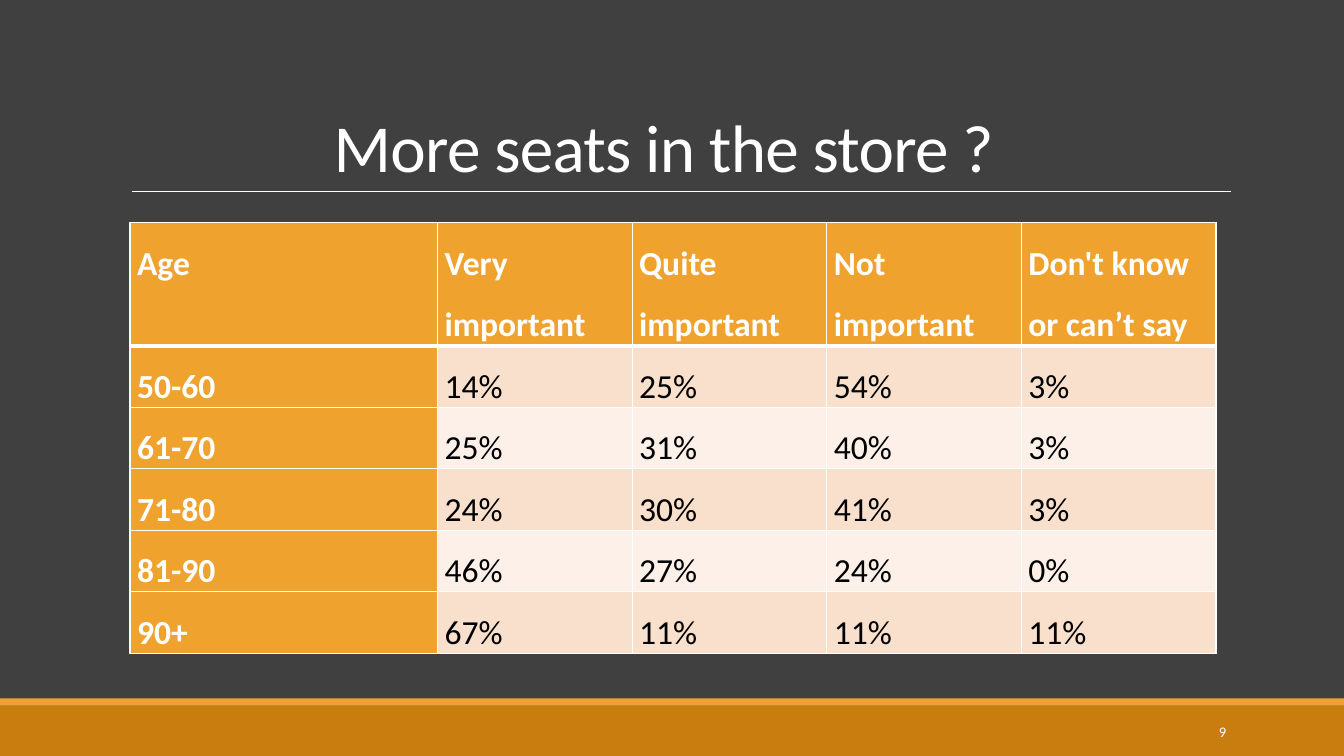
from lxml import etree
from pptx import Presentation
from pptx.dml.color import RGBColor
from pptx.enum.shapes import MSO_CONNECTOR, MSO_SHAPE
from pptx.enum.text import MSO_ANCHOR, MSO_AUTO_SIZE, PP_ALIGN
from pptx.oxml.ns import qn
from pptx.util import Inches, Pt

RECTANGLE = MSO_SHAPE.RECTANGLE
STRAIGHT = MSO_CONNECTOR.STRAIGHT
TOP, MIDDLE, BOTTOM = MSO_ANCHOR.TOP, MSO_ANCHOR.MIDDLE, MSO_ANCHOR.BOTTOM
LEFT, RIGHT = PP_ALIGN.LEFT, PP_ALIGN.RIGHT

FONT = "Calibri"
CHARCOAL = RGBColor(0x40, 0x40, 0x40)
ORANGE = RGBColor(0xF0, 0xA2, 0x2E)
DARK_ORANGE = RGBColor(0xC8, 0x7D, 0x0E)
PEACH = RGBColor(0xF9, 0xE0, 0xCD)
PALE_PEACH = RGBColor(0xFC, 0xF0, 0xE8)
WHITE = RGBColor(0xFF, 0xFF, 0xFF)
BLACK = RGBColor(0x00, 0x00, 0x00)

ANSWERS = [
    ["Age", "Very important", "Quite important", "Not important", "Don't know or can’t say"],
    ["50-60", "14%", "25%", "54%", "3%"],
    ["61-70", "25%", "31%", "40%", "3%"],
    ["71-80", "24%", "30%", "41%", "3%"],
    ["81-90", "46%", "27%", "24%", "0%"],
    ["90+", "67%", "11%", "11%", "11%"],
]
AGE_WIDTH, ANSWER_WIDTH = 3.05, 1.93
HEADER_HEIGHT, ROW_HEIGHT = 1.22, 0.61


def add_run(paragraph, text, size, color, bold=False):
    run = paragraph.add_run()
    run.text = text
    run.font.name = FONT
    run.font.size = Pt(size)
    run.font.bold = bold
    run.font.color.rgb = color
    return run


def add_band(slide, top, height, color):
    band = slide.shapes.add_shape(
        RECTANGLE, 0, Inches(top), Inches(13.33), Inches(height))
    band.shadow.inherit = False
    band.fill.solid()
    band.fill.fore_color.rgb = color
    band.line.fill.background()


def add_title_rule(slide):
    rule = slide.shapes.add_connector(
        STRAIGHT, Inches(1.31), Inches(1.9), Inches(12.21), Inches(1.9))
    rule.line.color.rgb = WHITE
    rule.line.width = Pt(0.5)
    etree.SubElement(rule.element.spPr, qn("a:effectLst"))


def fill_title(slide, text):
    title = slide.shapes.title
    title.left, title.top = Inches(1.2), Inches(0.31)
    title.width, title.height = Inches(11), Inches(1.59)
    frame = title.text_frame
    frame.auto_size = MSO_AUTO_SIZE.NONE
    frame.vertical_anchor = BOTTOM
    frame.margin_left = Inches(2.11)
    paragraph = frame.paragraphs[0]
    paragraph.alignment = LEFT
    paragraph.line_spacing = 0.85
    run = add_run(paragraph, text, 48, WHITE)
    run.font._element.set("spc", "-50")


def set_borders(cell, top_width, bottom_width):
    properties = cell._tc.get_or_add_tcPr()
    widths = {"a:lnL": 1, "a:lnR": 1, "a:lnT": top_width, "a:lnB": bottom_width}
    for side, width in widths.items():
        border = etree.SubElement(properties, qn(side), w=str(Pt(width)))
        fill = etree.SubElement(border, qn("a:solidFill"))
        etree.SubElement(fill, qn("a:srgbClr"), val=str(WHITE))


def format_cell(cell, text, row, column):
    is_heading = row == 0 or column == 0
    # A thick line parts the header from the answers
    set_borders(cell, 3 if row == 1 else 1, 3 if row == 0 else 1)
    cell.fill.solid()
    body_color = PEACH if row % 2 else PALE_PEACH
    cell.fill.fore_color.rgb = ORANGE if is_heading else body_color
    cell.margin_left = cell.margin_right = Inches(0.07)
    cell.margin_top = cell.margin_bottom = 0
    cell.vertical_anchor = TOP
    paragraph = cell.text_frame.paragraphs[0]
    paragraph.line_spacing = 1.5
    add_run(paragraph, text, 24, WHITE if is_heading else BLACK, is_heading)


def add_answer_table(slide):
    row_count, column_count = len(ANSWERS), len(ANSWERS[0])
    width = AGE_WIDTH + ANSWER_WIDTH * (column_count - 1)
    height = HEADER_HEIGHT + ROW_HEIGHT * (row_count - 1)
    table = slide.shapes.add_table(
        row_count, column_count, Inches(1.29), Inches(2.21),
        Inches(width), Inches(height)).table
    for index, column in enumerate(table.columns):
        column.width = Inches(ANSWER_WIDTH if index else AGE_WIDTH)
    for index, row in enumerate(table.rows):
        row.height = Inches(ROW_HEIGHT if index else HEADER_HEIGHT)
    table.first_col = True
    for row, answers in enumerate(ANSWERS):
        for column, text in enumerate(answers):
            format_cell(table.cell(row, column), text, row, column)


def add_page_number(slide, number):
    page_number = slide.shapes.add_textbox(
        Inches(10.83), Inches(7.06), Inches(1.43), Inches(0.4))
    frame = page_number.text_frame
    frame.word_wrap = True
    frame.vertical_anchor = MIDDLE
    frame.paragraphs[0].alignment = RIGHT
    add_run(frame.paragraphs[0], number, 10.5, WHITE)


def main():
    deck = Presentation()
    deck.slide_width, deck.slide_height = Inches(13.33), Inches(7.5)
    slide = deck.slides.add_slide(deck.slide_layouts[5])

    # Background, footer bands and title rule
    slide.background.fill.solid()
    slide.background.fill.fore_color.rgb = CHARCOAL
    add_band(slide, 7, 0.5, DARK_ORANGE)
    add_band(slide, 6.93, 0.07, ORANGE)
    add_title_rule(slide)

    # Content
    fill_title(slide, "More seats in the store ?")
    add_answer_table(slide)
    add_page_number(slide, "9")

    deck.save("out.pptx")


if __name__ == "__main__":
    main()
